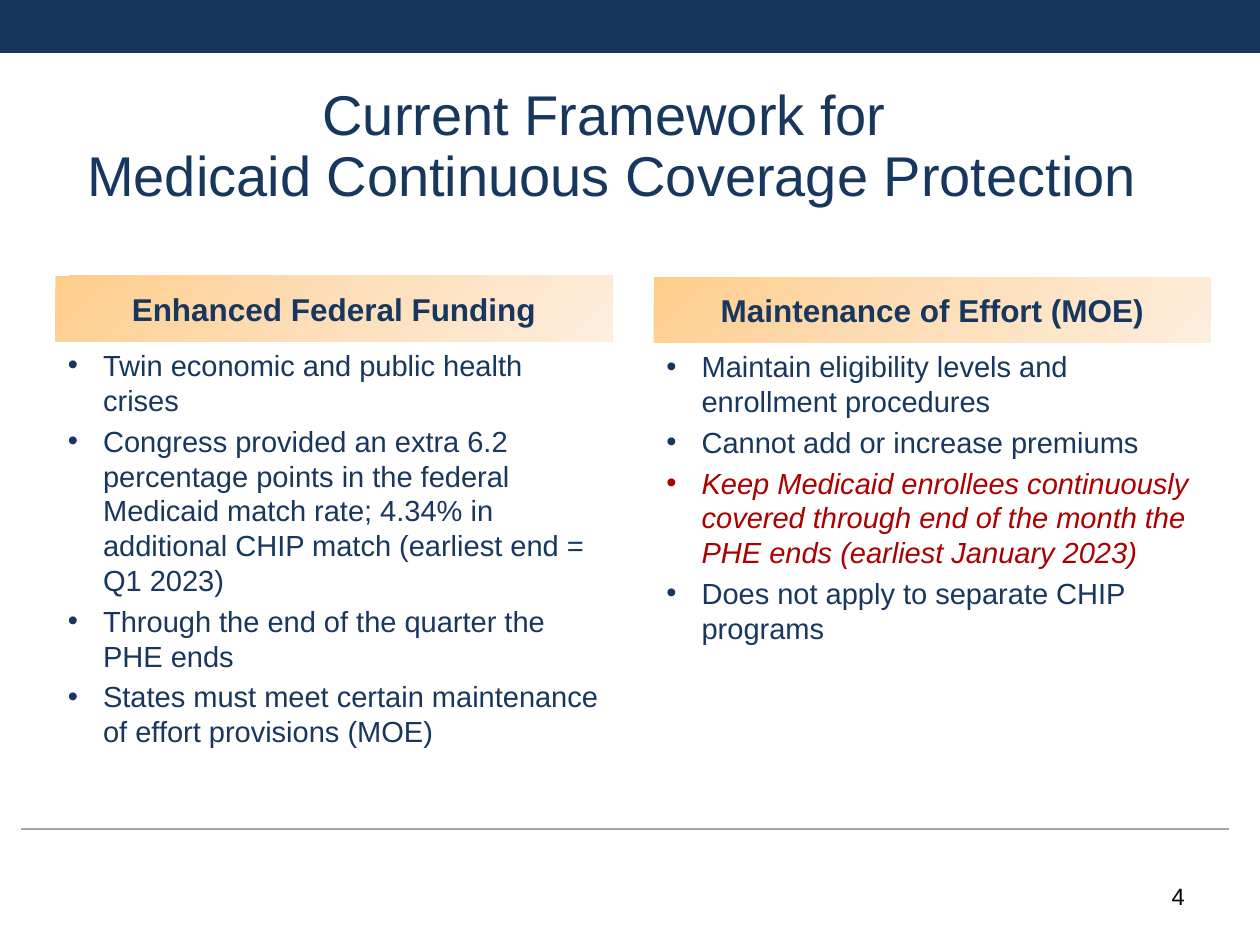
from copy import deepcopy
from dataclasses import dataclass

from lxml.etree import SubElement
from pptx import Presentation
from pptx.dml.color import RGBColor
from pptx.enum.shapes import MSO_CONNECTOR, MSO_SHAPE
from pptx.enum.text import MSO_ANCHOR, PP_ALIGN
from pptx.oxml.ns import qn
from pptx.shapes.autoshape import Shape
from pptx.slide import Slide
from pptx.text.text import TextFrame
from pptx.util import Inches, Pt

COLORS = {
    "navy": "17375E",
    "red": "AA0000",
    "rule": "A6A6A6",
    "black": "000000",
    "header_start": "FECD8B",
    "header_middle": "FDDEB9",
    "header_end": "FDEEDD",
}
FONT = "Arial"
COLUMN_WIDTH = 4.42
HEADER_HEIGHT = 0.52
BODY_HEIGHT = 3.03
BULLET_INDENT = 0.28


@dataclass(frozen=True)
class Point:
    text: str
    color: str = "navy"
    italic: bool = False


@dataclass(frozen=True)
class Column:
    left: float
    top: float
    heading: str
    points: tuple[Point, ...]


COLUMNS = (
    Column(0.44, 2.19, "Enhanced Federal Funding", (
        Point("Twin economic and public health crises"),
        Point("Congress provided an extra 6.2 percentage points in the federal "
              "Medicaid match rate; 4.34% in additional CHIP match (earliest end = Q1 2023)"),
        Point("Through the end of the quarter the PHE ends"),
        Point("States must meet certain maintenance of effort provisions (MOE)"),
    )),
    Column(5.19, 2.2, "Maintenance of Effort (MOE)", (
        Point("Maintain eligibility levels and enrollment procedures"),
        Point("Cannot add or increase premiums"),
        Point("Keep Medicaid enrollees continuously covered through end of the month "
              "the PHE ends (earliest January 2023)", "red", True),
        Point("Does not apply to separate CHIP programs"),
    )),
)


def rgb(name: str) -> RGBColor:
    return RGBColor.from_string(COLORS[name])


def write(frame: TextFrame, text: str, *, size: float, color: str = "navy",
          bold: bool = False, italic: bool = False, align: PP_ALIGN = PP_ALIGN.LEFT,
          line_spacing: float = 1.0, space_before: float = 0,
          bullet: bool = False, first: bool = True) -> None:
    paragraph = frame.paragraphs[0] if first else frame.add_paragraph()
    paragraph.text = text
    paragraph.alignment = align
    paragraph.line_spacing = line_spacing
    if not first:
        paragraph.space_before = Pt(space_before)
    if bullet:
        properties = paragraph._p.get_or_add_pPr()
        properties.set("marL", str(Inches(BULLET_INDENT)))
        properties.set("indent", str(-Inches(BULLET_INDENT)))
        SubElement(properties, qn("a:buFont"), typeface=FONT)
        SubElement(properties, qn("a:buChar"), char="•")
    for run in paragraph.runs:
        run.font.name = FONT
        run.font.size = Pt(size)
        run.font.bold = bold
        run.font.italic = italic
        run.font.color.rgb = rgb(color)


def add_text_area(slide: Slide, left: float, top: float, width: float, height: float,
                  anchor: MSO_ANCHOR = MSO_ANCHOR.TOP) -> TextFrame:
    frame = slide.shapes.add_textbox(
        Inches(left), Inches(top), Inches(width), Inches(height)).text_frame
    frame.word_wrap = True
    frame.vertical_anchor = anchor
    return frame


def add_band(slide: Slide, left: float, top: float, width: float, height: float) -> Shape:
    band = slide.shapes.add_shape(
        MSO_SHAPE.RECTANGLE, Inches(left), Inches(top), Inches(width), Inches(height))
    band.shadow.inherit = False
    band.line.fill.background()
    return band


def fill_header(header: Shape) -> None:
    header.fill.gradient()
    header.fill.gradient_angle = 315
    stop_list = header._element.spPr.find(".//" + qn("a:gsLst"))
    stop_list.insert(1, deepcopy(stop_list[0]))
    names = ("header_start", "header_middle", "header_end")
    for index, (stop, name) in enumerate(zip(header.fill.gradient_stops, names)):
        stop.position = index / 2
        stop.color.rgb = rgb(name)


def add_column(slide: Slide, column: Column) -> None:
    header = add_band(slide, column.left, column.top, COLUMN_WIDTH, HEADER_HEIGHT)
    fill_header(header)
    header.text_frame.word_wrap = True
    header.text_frame.vertical_anchor = MSO_ANCHOR.MIDDLE
    write(header.text_frame, column.heading, size=18, bold=True, align=PP_ALIGN.CENTER)
    body = add_text_area(
        slide, column.left, column.top + HEADER_HEIGHT, COLUMN_WIDTH, BODY_HEIGHT)
    for index, point in enumerate(column.points):
        write(body, point.text, size=16.6, color=point.color, italic=point.italic,
              space_before=3.3, bullet=True, first=index == 0)


def add_footer_rule(slide: Slide) -> None:
    rule = slide.shapes.add_connector(
        MSO_CONNECTOR.STRAIGHT, Inches(0.17), Inches(6.58), Inches(9.75), Inches(6.58))
    rule.line.color.rgb = rgb("rule")
    rule.line.width = Pt(0.75)
    SubElement(rule._element.spPr, qn("a:effectLst"))


def main() -> None:
    presentation = Presentation()
    presentation.slide_width = Inches(10)
    presentation.slide_height = Inches(7.5)
    slide = presentation.slides.add_slide(presentation.slide_layouts[6])

    top_band = add_band(slide, 0, 0, 10, 0.42)
    top_band.fill.solid()
    top_band.fill.fore_color.rgb = rgb("navy")
    add_footer_rule(slide)

    title = add_text_area(slide, 0.36, 0.75, 9, 0.85, MSO_ANCHOR.MIDDLE)
    write(title, "Current Framework for \vMedicaid Continuous Coverage Protection",
          size=32, align=PP_ALIGN.CENTER, line_spacing=0.9)
    for column in COLUMNS:
        add_column(slide, column)
    page_number = add_text_area(slide, 7.17, 6.95, 2.33, 0.4)
    write(page_number, "4", size=13.5, color="black", align=PP_ALIGN.RIGHT)

    presentation.save("out.pptx")


if __name__ == "__main__":
    main()
